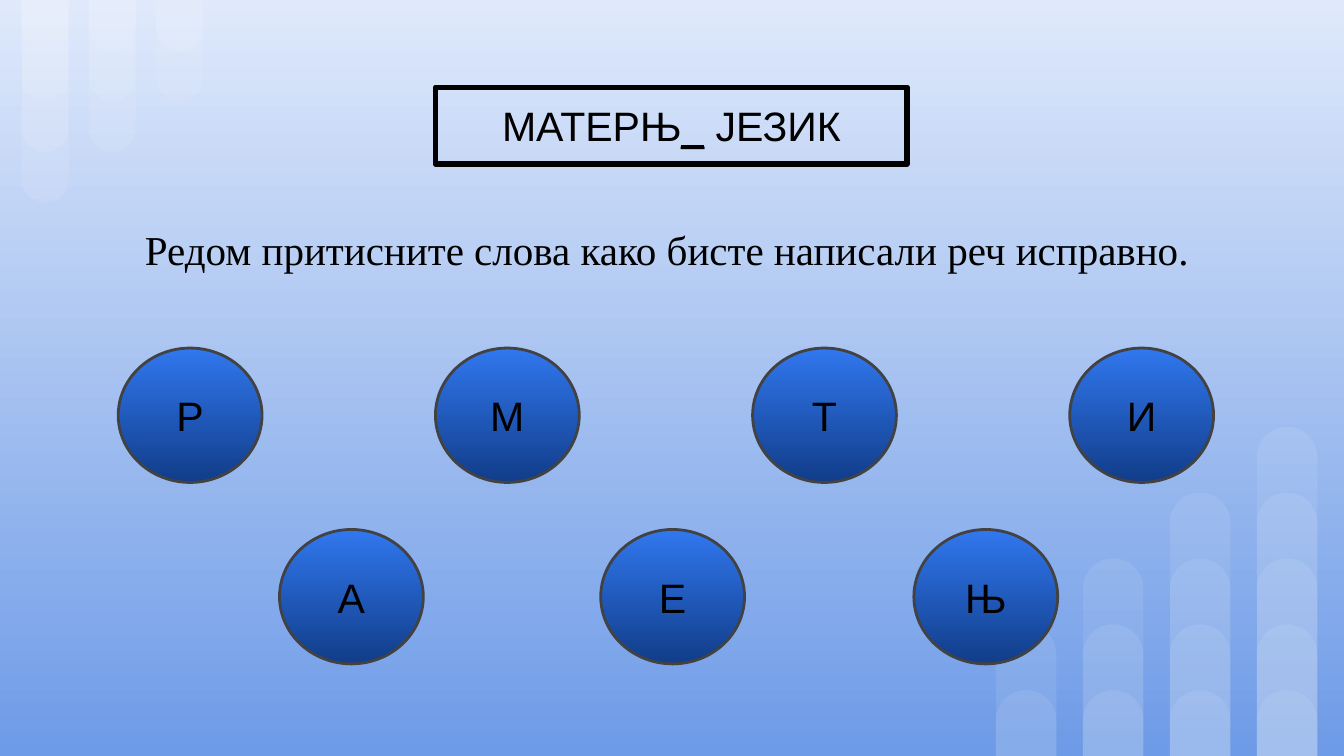
from dataclasses import dataclass

from lxml.etree import SubElement
from pptx import Presentation
from pptx.dml.color import RGBColor
from pptx.enum.shapes import MSO_SHAPE
from pptx.enum.text import MSO_ANCHOR, MSO_AUTO_SIZE, PP_ALIGN
from pptx.oxml.ns import qn
from pptx.util import Inches, Pt

BAR = MSO_SHAPE.ROUND_2_SAME_RECTANGLE
RECT = MSO_SHAPE.RECTANGLE
OVAL = MSO_SHAPE.OVAL
TOP = MSO_ANCHOR.TOP
MID = MSO_ANCHOR.MIDDLE
GROW = MSO_AUTO_SIZE.SHAPE_TO_FIT_TEXT
MIDDLE = PP_ALIGN.CENTER

WIDE, HIGH = Inches(10), Inches(5.625)
COLS, ROWS = 100, 56.25


@dataclass(frozen=True)
class Theme:
    """Hold the colours, fonts and sizes of the slide."""
    sky: tuple = ("DFE9FB", "6E9BE7")
    ball: tuple = ("3177EE", "113D8A")
    bar: str = "FFFFFF"
    edge: str = "424242"
    ink: str = "000000"
    sans: str = "Arial"
    serif: str = "Times New Roman"
    size: int = 22
    clear: int = 9


THEME = Theme()


def cell(col, row, wide, high):
    """Turn grid columns and rows into lengths."""
    x, y = WIDE / COLS, HIGH / ROWS
    return [round(n) for n in (col * x, row * y, wide * x, high * y)]


def apply(item, values):
    """Set each named value on the item."""
    for name, value in values.items():
        setattr(item, name, value)


def blend(fill, tones):
    """Fill from the first tone at the top to the last below."""
    fill.gradient()
    fill.gradient_angle = 270
    for stop, tone in zip(fill.gradient_stops, tones):
        stop.color.rgb = RGBColor.from_string(tone)


def draw(slide, kind, box):
    """Add a preset shape without a shadow."""
    shape = slide.shapes.add_shape(kind, *cell(*box))
    shape.shadow.inherit = False
    return shape


def edge(shape, tone, width):
    """Outline a shape."""
    shape.line.color.rgb = RGBColor.from_string(tone)
    shape.line.width = Pt(width)


def write(shape, parts, font, anchor=MID):
    """Write centred runs, each a text with its underline."""
    frame = shape.text_frame
    pad = Inches(0.1)
    apply(frame, {"word_wrap": True, "vertical_anchor": anchor,
                  "margin_left": pad, "margin_right": pad,
                  "margin_top": pad, "margin_bottom": pad})
    para = frame.paragraphs[0]
    para.alignment = MIDDLE
    for text, under in parts:
        run = para.add_run()
        run.text = text
        apply(run.font, {"name": font, "size": Pt(THEME.size),
                         "underline": under})
        run.font.color.rgb = RGBColor.from_string(THEME.ink)


def add_bar(slide, box, turn):
    """Add one pale bar with a round end."""
    bar = draw(slide, BAR, box)
    bar.rotation = turn
    bar.adjustments[0] = 0.5
    bar.fill.solid()
    bar.fill.fore_color.rgb = RGBColor.from_string(THEME.bar)
    for tone in bar.element.spPr.iter(qn("a:srgbClr")):
        SubElement(tone, qn("a:alpha"), val=str(THEME.clear * 1000))
    bar.line.fill.background()


def add_bars(slide):
    """Stack bars hung from the top left and risen at the lower right."""
    for i, count in enumerate((4, 3, 2)):
        for n in range(1, count + 1):
            add_bar(slide, (1.6 + 5 * i, 0, 3.5, 3.77 * n), 180)
    for i, count in enumerate((2, 3, 4, 5)):
        for n in range(1, count + 1):
            high = 4.9 * n
            add_bar(slide, (74.1 + 6.47 * i, ROWS - high, 4.5, high), 0)


def add_title(slide, text):
    """Place the task in the title."""
    title = slide.shapes.title
    names = ("left", "top", "width", "height")
    apply(title, dict(zip(names, cell(4.8, 13.7, 90.4, 9.6))))
    write(title, [(text, False)], THEME.serif)


def add_word(slide, parts):
    """Add the framed word with its gap."""
    frame = draw(slide, RECT, (32.4, 6.5, 35.1, 5.7))
    frame.fill.background()
    edge(frame, THEME.ink, 3)
    write(frame, parts, THEME.sans, TOP)
    frame.text_frame.auto_size = GROW


def add_balls(slide, letters, cols, row):
    """Add a row of letter balls."""
    for letter, col in zip(letters, cols):
        ball = draw(slide, OVAL, (col, row, 10.7, 10))
        blend(ball.fill, THEME.ball)
        edge(ball, THEME.edge, 1.5)
        write(ball, [(letter, False)], THEME.sans)


def main():
    """Build and save the slide."""
    deck = Presentation()
    apply(deck, {"slide_width": WIDE, "slide_height": HIGH})
    slide = deck.slides.add_slide(deck.slide_layouts[5])
    blend(slide.background.fill, THEME.sky)
    add_bars(slide)
    add_title(slide, "Редом притисните слова како бисте написали реч исправно. ")
    add_word(slide, [("МАТЕРЊ", False), ("_", True), (" ЈЕЗИК", False)])
    add_balls(slide, "РМТИ", [8.8 + 23.6 * i for i in range(4)], 25.9)
    add_balls(slide, "АЕЊ", (20.8, 44.7, 68), 39.4)
    deck.save("out.pptx")


if __name__ == "__main__":
    main()
